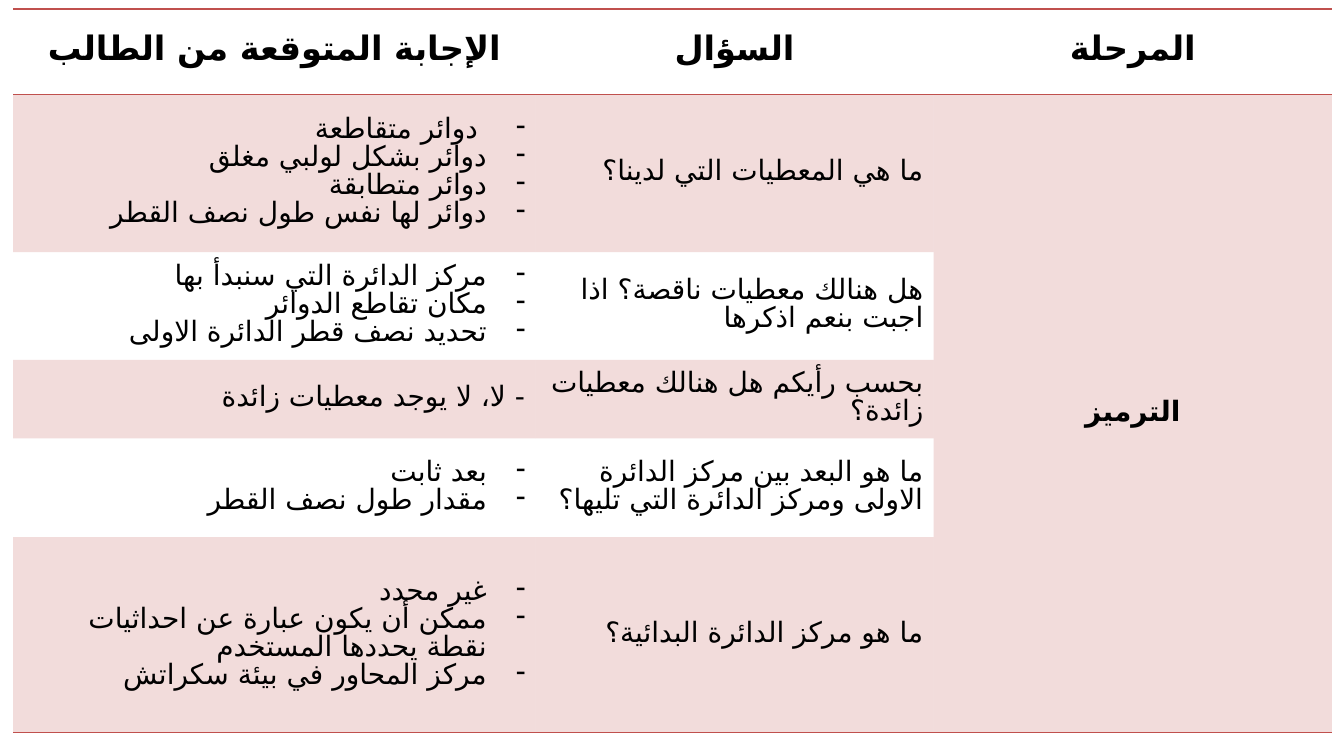
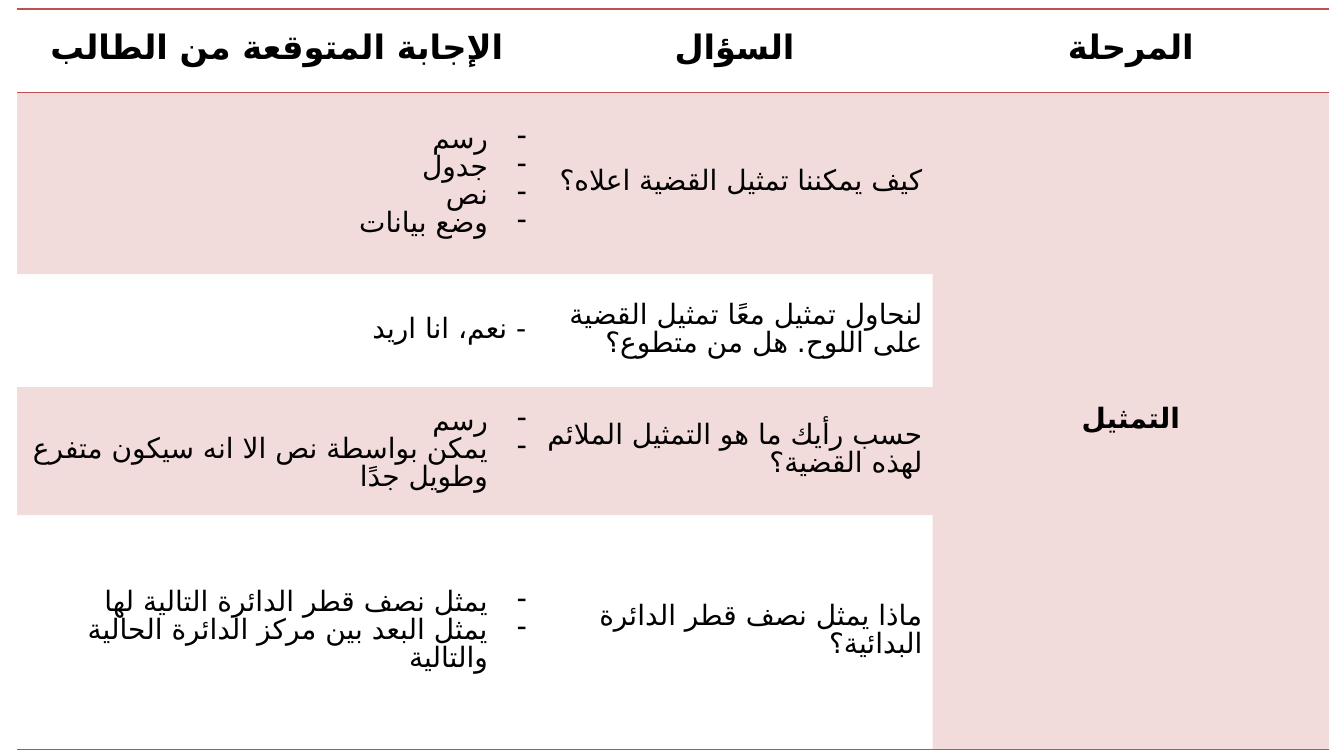
from dataclasses import dataclass

import pptx
import pptx.dml.color
import pptx.enum.text
import pptx.oxml.ns
import pptx.presentation
import pptx.table
import pptx.util
from pptx.util import Inches, Pt

ALIGN = pptx.enum.text.PP_ALIGN
qn = pptx.oxml.ns.qn


@dataclass(frozen=True)
class Theme:
    font: str = "Lato"
    arabic_font: str = "DejaVu Sans"
    ink: str = "000000"
    accent: str = "C0504D"
    band_opacity: int = 20
    rule_width: int = 1
    header_size: int = 24
    body_size: int = 20
    bullet_indent: float = 0.38
    plain_table: str = "{2D5ABB26-0587-4C30-8999-92F81FD0307C}"


@dataclass(frozen=True)
class Step:
    """One question, its expected answers and the height of its row."""
    height: float
    question: str
    answers: tuple[str, ...]
    bulleted: bool = True


@dataclass(frozen=True)
class Stage:
    name: str
    left: float
    top: float
    columns: tuple[float, float, float]
    header_height: float
    steps: tuple[Step, ...]


THEME = Theme()
HEADERS = ("الإجابة المتوقعة من الطالب", "السؤال", "المرحلة")
STAGES = (
    Stage("الترميز", 0.13, 0.09, (5.18, 3.95, 3.95), 0.85, (
        Step(1.56, "ما هي المعطيات التي لدينا؟",
             (" دوائر متقاطعة", "دوائر بشكل لولبي مغلق", "دوائر متطابقة",
              "دوائر لها نفس طول نصف القطر")),
        Step(1.07, "هل هنالك معطيات ناقصة؟ اذا اجبت بنعم اذكرها",
             ("مركز الدائرة التي سنبدأ بها", "مكان تقاطع الدوائر",
              "تحديد نصف قطر الدائرة الاولى")),
        Step(0.78, "بحسب رأيكم هل هنالك معطيات زائدة؟ ",
             ("- لا، لا يوجد معطيات زائدة",), bulleted=False),
        Step(0.98, "ما هو البعد بين مركز الدائرة الاولى ومركز الدائرة التي تليها؟",
             ("بعد ثابت", "مقدار طول نصف القطر")),
        Step(1.94, "ما هو مركز الدائرة البدائية؟",
             ("غير محدد", "ممكن أن يكون عبارة عن احداثيات نقطة يحددها المستخدم",
              "مركز المحاور في بيئة سكراتش")),
    )),
    Stage("التمثيل", 0.17, 0.09, (5.15, 3.93, 3.93), 0.83, (
        Step(1.8, "كيف يمكننا تمثيل القضية اعلاه؟",
             ("رسم", "جدول ", "نص ", "وضع بيانات")),
        Step(1.12, "لنحاول تمثيل معًا تمثيل القضية على اللوح. هل من متطوع؟",
             ("- نعم، انا اريد",), bulleted=False),
        Step(1.27, "حسب رأيك ما هو التمثيل الملائم لهذه القضية؟",
             ("رسم", "يمكن بواسطة نص الا انه سيكون متفرع وطويل جدًا")),
        Step(2.33, "ماذا يمثل نصف قطر الدائرة البدائية؟",
             ("يمثل نصف قطر الدائرة التالية لها",
              "يمثل البعد بين مركز الدائرة الحالية والتالية")),
    )),
)


def write(cell: pptx.table._Cell, lines: tuple[str, ...], size: int,
          align: ALIGN = ALIGN.RIGHT, bold: bool = False,
          bulleted: bool = False) -> None:
    """Fill a cell with right-to-left paragraphs."""
    cell.vertical_anchor = pptx.enum.text.MSO_ANCHOR.MIDDLE
    frame = cell.text_frame
    font_format = {"name": THEME.font, "size": Pt(size), "bold": bold}
    for index, line in enumerate(lines):
        paragraph = frame.add_paragraph() if index else frame.paragraphs[0]
        paragraph.alignment = align
        paragraph.line_spacing = Pt(size)
        properties = paragraph._p.get_or_add_pPr()
        properties.set("rtl", "1")
        if bulleted:
            indent = Inches(THEME.bullet_indent)
            properties.set("marL", str(indent))
            properties.set("indent", str(-indent))
            properties.append(properties.makeelement(
                qn("a:buChar"), {"char": "-"}))
        run = paragraph.add_run()
        run.text = line
        for key, value in font_format.items():
            setattr(run.font, key, value)
        run.font.color.rgb = pptx.dml.color.RGBColor.from_string(THEME.ink)
        run_properties = run._r.get_or_add_rPr()
        run_properties.append(run_properties.makeelement(
            qn("a:cs"), {"typeface": THEME.arabic_font}))


def paint(cell: pptx.table._Cell, banded: bool, rules: tuple[str, ...]) -> None:
    """Set the ruled sides (lnT, lnB) and the translucent band of a cell."""
    properties = cell._tc.get_or_add_tcPr()
    for side in rules:
        rule = properties.makeelement(
            qn(f"a:{side}"), {"w": str(Pt(THEME.rule_width))})
        properties.append(rule)
        fill = rule.makeelement(qn("a:solidFill"), {})
        rule.append(fill)
        fill.append(fill.makeelement(qn("a:srgbClr"), {"val": THEME.accent}))
    if not banded:
        cell.fill.background()
        return
    cell.fill.solid()
    cell.fill.fore_color.rgb = pptx.dml.color.RGBColor.from_string(THEME.accent)
    color = properties.find(qn("a:solidFill"))[0]
    color.append(color.makeelement(
        qn("a:alpha"), {"val": str(THEME.band_opacity * 1000)}))


def add_stage(deck: pptx.presentation.Presentation, stage: Stage) -> None:
    slide = deck.slides.add_slide(deck.slide_layouts[6])
    heights = (stage.header_height, *(step.height for step in stage.steps))
    last = len(stage.steps)
    grid = slide.shapes.add_table(
        len(heights), len(HEADERS), Inches(stage.left), Inches(stage.top),
        Inches(sum(stage.columns)), Inches(sum(heights))).table
    for option in ("first_row", "horz_banding"):
        setattr(grid, option, False)
    grid._tbl.tblPr.find(qn("a:tableStyleId")).text = THEME.plain_table
    for column, width in zip(grid.columns, stage.columns):
        column.width = Inches(width)
    for row, height in zip(grid.rows, heights):
        row.height = Inches(height)

    for column, header in enumerate(HEADERS):
        write(grid.cell(0, column), (header,), THEME.header_size, ALIGN.CENTER, True)
        paint(grid.cell(0, column), False, ("lnT", "lnB"))
    for row, step in enumerate(stage.steps, start=1):
        write(grid.cell(row, 0), step.answers, THEME.body_size, bulleted=step.bulleted)
        write(grid.cell(row, 1), (step.question,), THEME.body_size)
        for column in (0, 1):
            paint(grid.cell(row, column), row % 2 == 1,
                  ("lnB",) if row == last else ())
    stage_cell = grid.cell(1, 2)
    stage_cell.merge(grid.cell(last, 2))
    write(stage_cell, (stage.name,), THEME.body_size, ALIGN.CENTER, True)
    paint(stage_cell, True, ("lnB",))


def main() -> None:
    deck = pptx.Presentation()
    deck.slide_width, deck.slide_height = Inches(13.33), Inches(7.5)
    for stage in STAGES:
        add_stage(deck, stage)
    deck.save("out.pptx")


if __name__ == "__main__":
    main()
